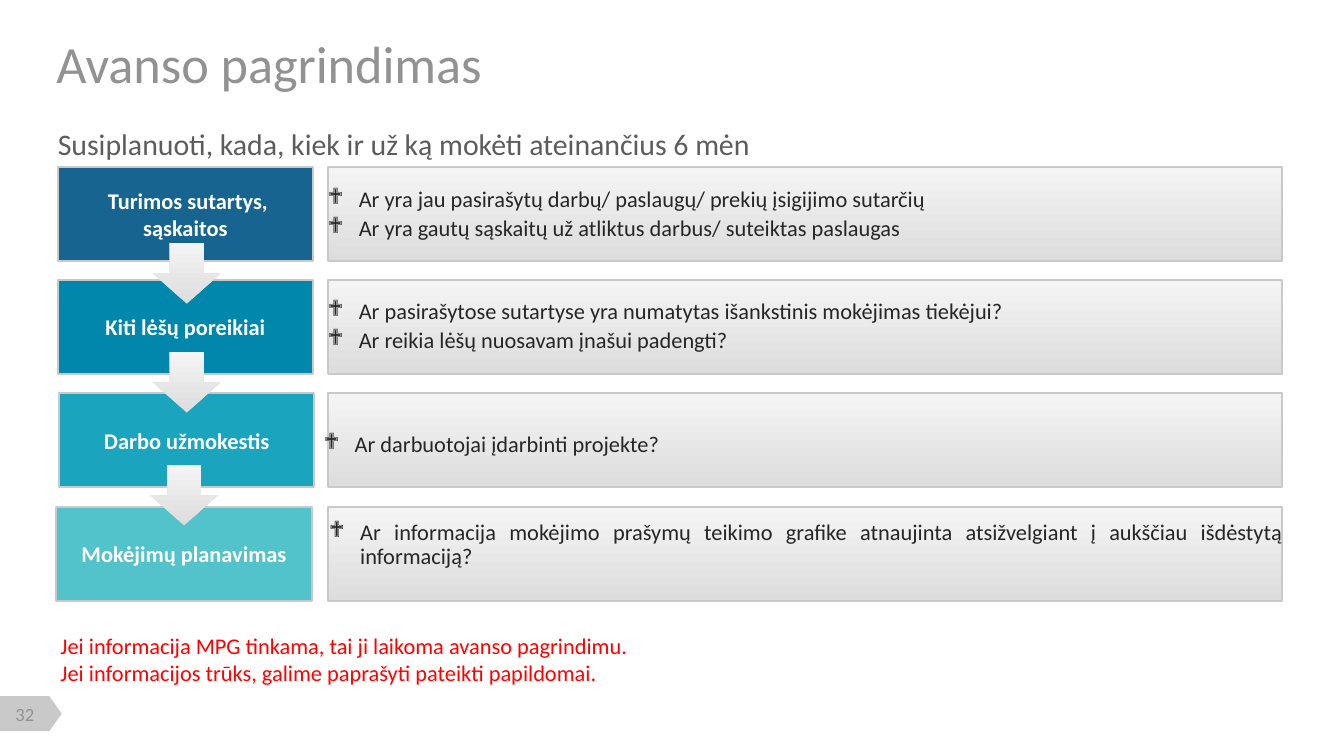
from lxml import etree
from pptx import Presentation
from pptx.dml.color import RGBColor
from pptx.enum.shapes import MSO_SHAPE as SHAPE
from pptx.enum.text import MSO_ANCHOR as ANCHOR, PP_ALIGN as ALIGN
from pptx.oxml.ns import qn
from pptx.util import Inches, Pt

COLORS = {
    "title": "929292",
    "subtitle": "5C5C5C",
    "body": "262626",
    "white": "FFFFFF",
    "note": "FF0000",
    "border": "C9C9C9",
    "gradient": ("DDDDDD", "F4F4F4"),
}
FONT = "Calibri"
ROWS_TOP, LAST_ROW_TOP, ROW_HEIGHT = 1.24, 3.77, 0.7
PANEL_LEFT, PANEL_WIDTH = 2.44, 7.1
ARROWS = [(1.14, 1.81), (1.14, 2.62), (1.12, 3.46)]

# step label, step colour, step left, (bullet shift right, shift down), questions
ROWS = [
    (" Turimos sutartys, sąskaitos", "176490", 0.43, (0, 0.16),
     ["Ar yra jau pasirašytų darbų/ paslaugų/ prekių įsigijimo sutarčių",
      "Ar yra gautų sąskaitų už atliktus darbus/ suteiktas paslaugas"]),
    ("Kiti lėšų poreikiai", "0187AC", 0.43, (0, 0.15),
     ["Ar pasirašytose sutartyse yra numatytas išankstinis mokėjimas tiekėjui?",
      "Ar reikia lėšų nuosavam įnašui padengti?"]),
    ("Darbo užmokestis", "1AA4BE", 0.44, (-0.03, 0.3),
     ["Ar darbuotojai įdarbinti projekte?"]),
    ("Mokėjimų planavimas", "52C3CB", 0.42, (0.01, 0.11),
     ["Ar informacija mokėjimo prašymų teikimo grafike atnaujinta "
      "atsižvelgiant į aukščiau išdėstytą informaciją?"]),
]


def rgb(value):
    return RGBColor.from_string(value)


def style_text(frame, size, color, bold=False, align=ALIGN.LEFT):
    for para in frame.paragraphs:
        para.alignment = align
        for span in para.runs:
            span.font.name = FONT
            span.font.size = Pt(size)
            span.font.bold = bold
            span.font.color.rgb = rgb(color)


def add_text(page, box, lines, size, color, align=ALIGN.LEFT,
             anchor=ANCHOR.MIDDLE, insets=(0, 0, 0, 0)):
    frame = page.shapes.add_textbox(*map(Inches, box)).text_frame
    frame.word_wrap = True
    frame.vertical_anchor = anchor
    (frame.margin_left, frame.margin_top,
     frame.margin_right, frame.margin_bottom) = map(Inches, insets)
    frame.text = "\n".join(lines)
    style_text(frame, size, color, align=align)
    return frame


def add_block(page, kind, box, fill=None, border=True):
    """Add a shape with a solid fill, or the grey gradient if none is given."""
    shape = page.shapes.add_shape(kind, *map(Inches, box))
    shape.shadow.inherit = False
    if fill:
        shape.fill.solid()
        shape.fill.fore_color.rgb = rgb(fill)
    else:
        shape.fill.gradient()
        shape.fill.gradient_angle = 90
        for stop, color in zip(shape.fill.gradient_stops, COLORS["gradient"]):
            stop.color.rgb = rgb(color)
    if border:
        shape.line.color.rgb = rgb(COLORS["border"])
        shape.line.width = Pt(1)
    else:
        shape.line.fill.background()
    return shape


def add_bullet(para):
    properties = para._p.get_or_add_pPr()
    properties.set("marL", str(Inches(0.23)))
    properties.set("indent", str(Inches(-0.23)))
    color = etree.SubElement(properties, qn("a:buClr"))
    etree.SubElement(color, qn("a:srgbClr"), val=COLORS["body"])
    etree.SubElement(properties, qn("a:buFont"), typeface="Wingdings")
    etree.SubElement(properties, qn("a:buChar"), char="❖")
    para.line_spacing = 0.9
    para.space_after = Pt(2.5)


def add_step(page, box, label, fill):
    frame = add_block(page, SHAPE.RECTANGLE, box, fill).text_frame
    frame.word_wrap = True
    frame.vertical_anchor = ANCHOR.MIDDLE
    frame.text = label
    style_text(frame, 12, COLORS["white"], bold=True, align=ALIGN.CENTER)


def add_questions(page, box, shift, questions):
    left, top, width, height = box
    add_block(page, SHAPE.RECTANGLE, box)
    right, down = shift
    text_height = 0.41 if len(questions) > 1 else 0.36
    frame = add_text(page, (left + right, top + down, width, text_height),
                     questions, 12, COLORS["body"], ALIGN.JUSTIFY, ANCHOR.TOP)
    for para in frame.paragraphs:
        add_bullet(para)


def add_page_number(page, box, number):
    left, top, width, height = box
    tag = add_block(page, SHAPE.FLOWCHART_OFFPAGE_CONNECTOR,
                    (left + (width - height) / 2, top + (height - width) / 2,
                     height, width), COLORS["border"], border=False)
    tag.rotation = 270
    add_text(page, (left + 0.02, top + 0.05, 0.33, 0.17), [number], 10,
             COLORS["title"], ALIGN.CENTER)


def add_heading(page, box):
    left, top, width, _ = box
    add_text(page, (left, top, width, 0.39), ["Avanso pagrindimas"], 28,
             COLORS["title"], insets=(0, 0.05, 0.1, 0.05))
    add_text(page, (left + 0.01, top + 0.7, width, 0.19),
             ["Susiplanuoti, kada, kiek ir už ką mokėti ateinančius 6 mėn"],
             16, COLORS["subtitle"])


def main():
    deck = Presentation()
    deck.slide_width = Inches(10)
    deck.slide_height = deck.slide_width * 9 // 16
    page = deck.slides.add_slide(deck.slide_layouts[6])

    add_page_number(page, (0, 5.18, 0.46, 0.26), "32")
    add_heading(page, (0.42, 0.27, 9.15, 0.89))
    pitch = (LAST_ROW_TOP - ROWS_TOP) / (len(ROWS) - 1)
    for index, (label, fill, left, shift, questions) in enumerate(ROWS):
        top = ROWS_TOP + index * pitch
        add_step(page, (left, top, 1.9, ROW_HEIGHT), label, fill)
        add_questions(page, (PANEL_LEFT, top, PANEL_WIDTH, ROW_HEIGHT),
                      shift, questions)
    for left, top in ARROWS:
        add_block(page, SHAPE.DOWN_ARROW, (left, top, 0.5, 0.45), border=False)
    add_text(page, (0.45, 4.71, 9.15, 0.39),
             ["Jei informacija MPG tinkama, tai ji laikoma avanso pagrindimu.",
              "Jei informacijos trūks, galime paprašyti pateikti papildomai."],
             12, COLORS["note"], insets=(0, 0.05, 0.1, 0.05))
    deck.save("out.pptx")


if __name__ == "__main__":
    main()
